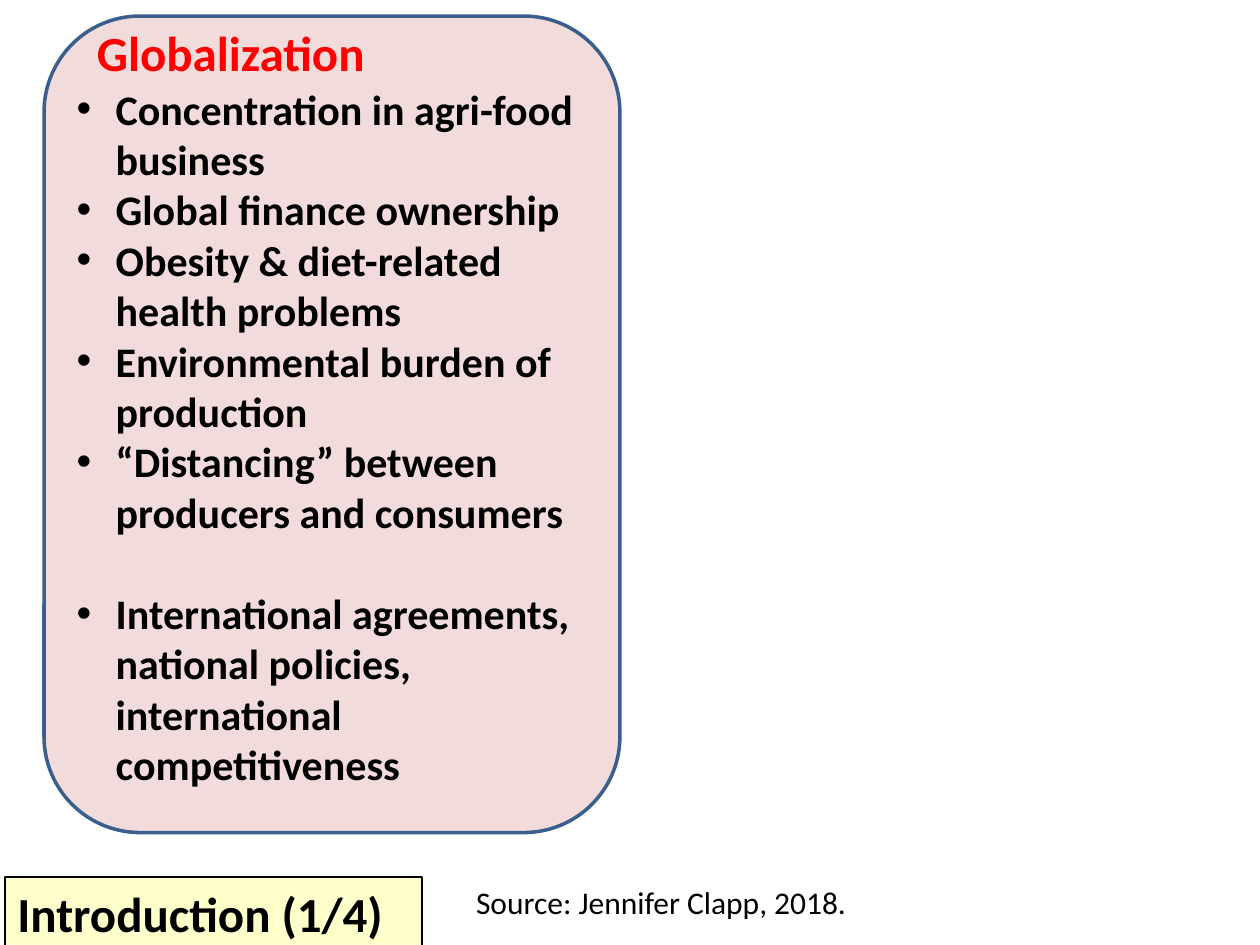
from lxml.etree import SubElement
from pptx import Presentation
from pptx.dml.color import RGBColor
from pptx.enum.shapes import MSO_SHAPE
from pptx.enum.text import MSO_ANCHOR, MSO_AUTO_SIZE, PP_ALIGN
from pptx.oxml.ns import qn
from pptx.util import Inches, Pt

BLACK, RED = "000000", "FF0000"
PINK, BLUE, CREAM = "F2DCDB", "3A5F8C", "FFFFCC"


def color(hex_str):
    return RGBColor.from_string(hex_str)


class SlideBuilder:
    """Holds the style and current slide; boxes are percentages of its size."""
    font = "Calibri"
    indent = Inches(0.31)

    def __init__(self, prs):
        self.width, self.height = prs.slide_width, prs.slide_height
        self.slide = prs.slides.add_slide(prs.slide_layouts[6])

    def place(self, x, y, w, h):
        return (int(self.width * x / 100), int(self.height * y / 100),
                int(self.width * w / 100), int(self.height * h / 100))

    def panel(self, kind, box, fill, line, weight):
        sp = self.slide.shapes.add_shape(kind, *self.place(*box))
        sp.shadow.inherit = False
        sp.fill.solid()
        sp.fill.fore_color.rgb = color(fill)
        sp.line.color.rgb = color(line)
        sp.line.width = Pt(weight)
        return sp

    def textbox(self, box, wrap=True):
        sp = self.slide.shapes.add_textbox(*self.place(*box))
        sp.text_frame.word_wrap = wrap
        return sp

    def add_text(self, sp, lines, size, hex_str=BLACK, bold=True):
        tf = sp.text_frame
        tf.auto_size = MSO_AUTO_SIZE.SHAPE_TO_FIT_TEXT
        tf.vertical_anchor = MSO_ANCHOR.TOP
        for i, line in enumerate(lines):
            p = tf.add_paragraph() if i else tf.paragraphs[0]
            p.alignment = PP_ALIGN.LEFT
            r = p.add_run()
            r.text = line
            r.font.name, r.font.size, r.font.bold = self.font, Pt(size), bold
            r.font.color.rgb = color(hex_str)
        return tf.paragraphs

    def bullets(self, box, items, size):
        paragraphs = self.add_text(self.textbox(box), items, size)
        for p in paragraphs:
            pPr = p._p.get_or_add_pPr()
            pPr.set("marL", str(self.indent))
            pPr.set("indent", str(-self.indent))
            SubElement(pPr, qn("a:buFont"), typeface="Arial")
            SubElement(pPr, qn("a:buChar"), char="•")
        return paragraphs


def main():
    prs = Presentation()
    prs.slide_width, prs.slide_height = Inches(10), Inches(7.5)
    s = SlideBuilder(prs)

    # Globalization panel with its heading
    s.panel(MSO_SHAPE.ROUNDED_RECTANGLE, (3.5, 1.7, 45.7, 86.4), PINK, BLUE, 2)
    s.add_text(s.textbox((6.7, 1.73, 23.5, 7.6), wrap=False),
               ["Globalization"], 28, RED)

    # Issues, with the policy point set apart by one line
    issues = s.bullets((5.1, 8.13, 44.9, 76.8), [
        "Concentration in agri-food business",
        "Global finance ownership",
        "Obesity & diet-related health problems",
        "Environmental burden of production",
        "“Distancing” between producers and consumers",
        "International agreements, national policies, international competitiveness",
    ], 24)
    issues[-1].space_before = Pt(29)

    # Section label and source line
    label = s.panel(MSO_SHAPE.RECTANGLE, (0.4, 92.8, 33.1, 7.6), CREAM, BLACK, 0.75)
    s.add_text(label, ["Introduction (1/4)"], 28)
    s.add_text(s.textbox((36.8, 92.8, 31.8, 5.33), wrap=False),
               ["Source: Jennifer Clapp, 2018."], 18, bold=False)

    prs.save("out.pptx")


if __name__ == "__main__":
    main()
